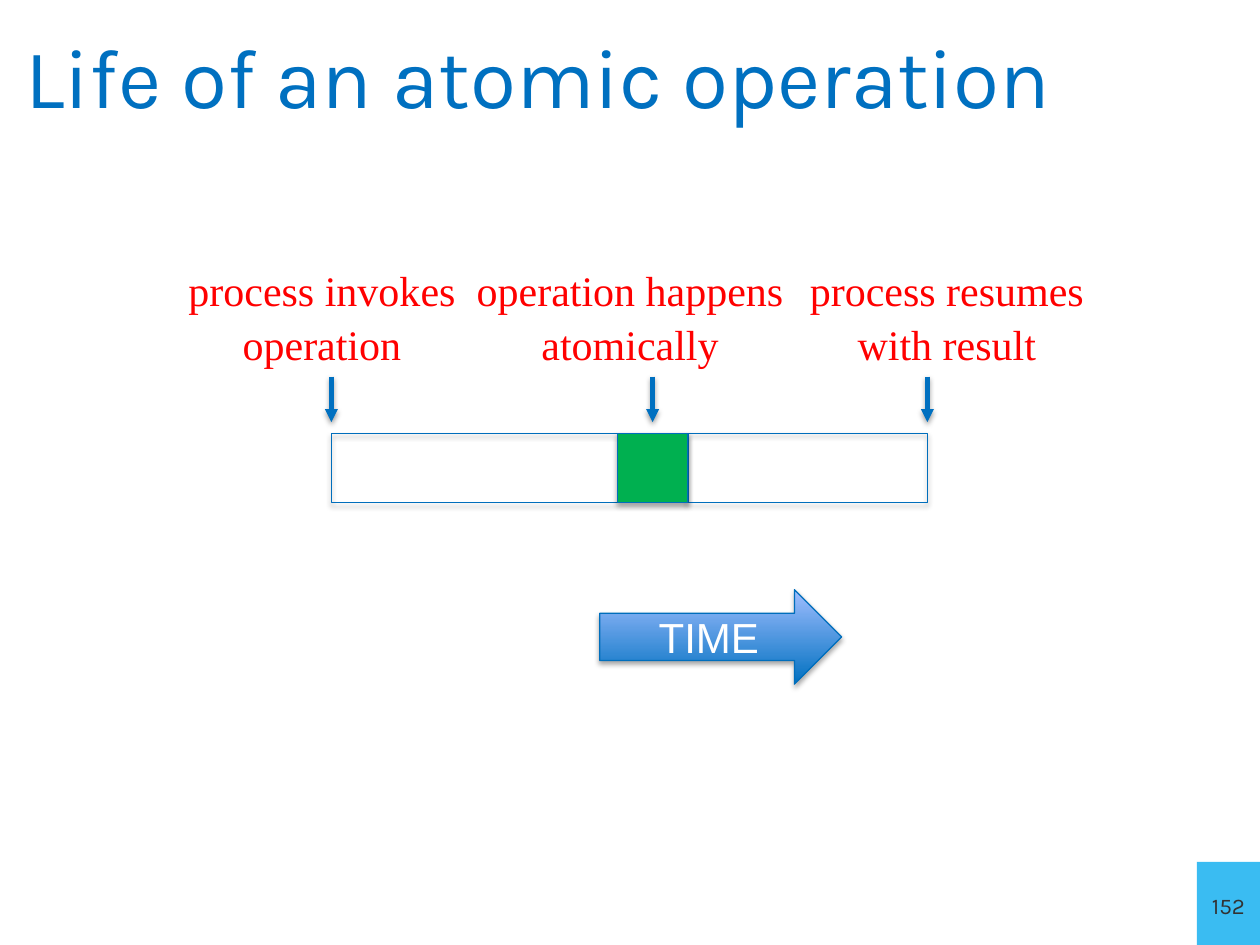
from lxml.etree import SubElement
from pptx import Presentation
from pptx.dml.color import RGBColor
from pptx.enum.shapes import MSO_CONNECTOR, MSO_SHAPE
from pptx.enum.text import MSO_ANCHOR, PP_ALIGN
from pptx.oxml import parse_xml
from pptx.oxml.ns import nsdecls, qn
from pptx.util import Inches, Pt

BLUE, EDGE, GREEN, RED = "0070C0", "006EBC", "00B050", "FF0000"


def color(code):
    return RGBColor.from_string(code)


def style(frame, text, size, font, code, align=PP_ALIGN.CENTER):
    """Fill a text frame with one styled paragraph."""
    frame.text = text
    para = frame.paragraphs[0]
    para.alignment = align
    run = para.runs[0]
    run.font.size = Pt(size)
    run.font.name = font
    run.font.color.rgb = color(code)
    return run


def add_shadow(item, alpha, dist):
    """Cast a soft shadow straight down; call after the line is set."""
    item._element.spPr.append(parse_xml(
        f'<a:effectLst {nsdecls("a")}>'
        f'<a:outerShdw blurRad="{Pt(3.1)}" dist="{Pt(dist)}" dir="5400000" rotWithShape="0">'
        f'<a:srgbClr val="000000"><a:alpha val="{alpha * 1000}"/></a:srgbClr>'
        '</a:outerShdw></a:effectLst>'))


def add_block(slide, kind, left, top, width, height, fill=None):
    """Draw an outlined shape with a shadow."""
    block = slide.shapes.add_shape(
        kind, Inches(left), Inches(top), Inches(width), Inches(height))
    if fill:
        block.fill.solid()
        block.fill.fore_color.rgb = color(fill)
    else:
        block.fill.background()
    block.line.color.rgb = color(EDGE)
    block.line.width = Pt(0.75)
    add_shadow(block, 35, 1.8)
    return block


def add_title(slide, left, top, width, height):
    title = slide.shapes.title
    title.left, title.top = Inches(left), Inches(top)
    title.width, title.height = Inches(width), Inches(height)
    frame = title.text_frame
    frame.vertical_anchor = MSO_ANCHOR.MIDDLE
    style(frame, "Life of an atomic operation", 48, "Karla", BLUE, PP_ALIGN.LEFT)


def add_number(slide, left, top, width, height):
    box = slide.shapes.add_shape(
        MSO_SHAPE.RECTANGLE, Inches(left), Inches(top), Inches(width), Inches(height))
    box.shadow.inherit = False
    box.fill.solid()
    box.fill.fore_color.rgb = color("3ABCF2")
    box.line.fill.background()
    frame = box.text_frame
    frame.word_wrap = False
    frame.vertical_anchor = MSO_ANCHOR.MIDDLE
    run = style(frame, "152", 16, "Karla", "323232")
    run.font._element.set("cap", "small")


def add_label(slide, text, left, top, width, height):
    box = slide.shapes.add_textbox(
        Inches(left), Inches(top), Inches(width), Inches(height))
    frame = box.text_frame
    frame.word_wrap = True
    style(frame, text, 24, "Times New Roman", RED)
    frame.paragraphs[0].line_spacing = 1.06


def add_pointer(slide, x, top, bottom):
    arrow = slide.shapes.add_connector(
        MSO_CONNECTOR.STRAIGHT, Inches(x), Inches(top), Inches(x), Inches(bottom))
    arrow.line.color.rgb = color(BLUE)
    arrow.line.width = Pt(2.5)
    SubElement(arrow.line._get_or_add_ln(), qn("a:tailEnd"), type="triangle")
    add_shadow(arrow, 38, 1.6)


def add_span(slide, left, top, width, height):
    """Draw the operation's bar, its atomic step and the labelled moments."""
    right, start, step = left + width, left + 2.27, 0.56
    end = start + step
    add_block(slide, MSO_SHAPE.RECTANGLE, left, top, end - left, height)
    add_block(slide, MSO_SHAPE.RECTANGLE, end, top, right - end, height)
    add_block(slide, MSO_SHAPE.RECTANGLE, start, top, step, height, GREEN)
    moments = [
        (left, "process invokes operation", 1.38, 2.35),
        (start + step / 2, "operation happens atomically", 3.49, 3.02),
        (right, "process resumes with result", 6.2, 2.63),
    ]
    for x, text, edge, wide in moments:
        add_pointer(slide, x, top - 0.45, top - 0.09)
        add_label(slide, text, edge, top - 1.41, wide, 0.91)


def add_time(slide, left, top, width, height):
    arrow = add_block(slide, MSO_SHAPE.RIGHT_ARROW, left, top, width, height)
    arrow.fill.gradient()
    arrow.fill.gradient_angle = 90
    for stop, place, code in zip(arrow.fill.gradient_stops, (0, 1), (BLUE, "A0BEFF")):
        stop.position = place
        stop.color.rgb = color(code)
    frame = arrow.text_frame
    frame.vertical_anchor = MSO_ANCHOR.MIDDLE
    style(frame, "TIME", 24, "Arial", "FFFFFF")


def main():
    deck = Presentation()
    deck.slide_width, deck.slide_height = Inches(10), Inches(7.5)
    slide = deck.slides.add_slide(deck.slide_layouts[5])
    add_title(slide, 0.1, 0.11, 9.8, 0.97)
    add_number(slide, 9.5, 6.84, 0.5, 0.66)
    add_span(slide, 2.63, 3.44, 4.73, 0.55)
    add_time(slide, 4.76, 4.68, 1.92, 0.75)
    deck.save("out.pptx")


if __name__ == "__main__":
    main()
